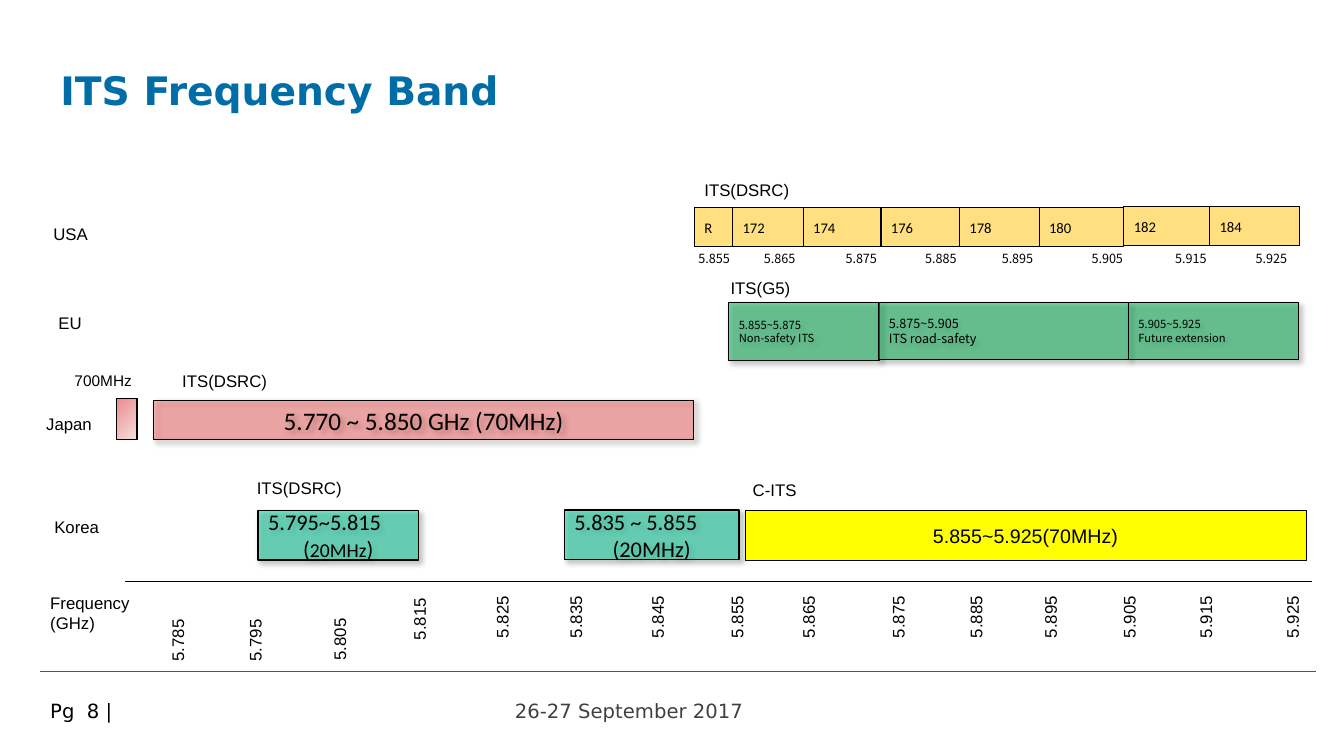
"""Build the ITS frequency band slide."""
from dataclasses import dataclass
from typing import Optional

from lxml.etree import SubElement
from pptx import Presentation
from pptx.dml.color import RGBColor as Rgb
from pptx.enum.shapes import MSO_CONNECTOR as Connector, MSO_SHAPE as Shape
from pptx.enum.text import MSO_ANCHOR as Anchor, MSO_AUTO_SIZE as AutoSize, PP_ALIGN as Align
from pptx.oxml.ns import qn
from pptx.util import Pt

COLOURS = {
    "black": "000000", "blue": "006DA7", "grey": "404040", "amber": "FFC000",
    "green": "00B050", "teal": "00CC99", "red": "FF0000", "yellow": "FFFF00",
    "rose": "EA8C8C", "pale rose": "F7DEDE",
}
ARIAL, CALIBRI, DEJAVU, NOTO = "Arial", "Calibri", "DejaVu Sans", "Noto Sans CJK KR"


@dataclass
class Line:
    runs: list[tuple[str, float]]
    align: Align = Align.LEFT


@dataclass
class Label:
    text: str
    left: float
    top: float
    width: float
    height: float = 21.6
    size: float = 12
    font: str = ARIAL
    colour: str = "black"
    wrap: bool = True
    rotation: float = 0


@dataclass
class Band:
    left: float
    top: float
    width: float
    height: float
    fill: str
    lines: list[Line]
    font: str = CALIBRI
    outline: float = 0.75
    opacity: Optional[int] = 50
    shadow: bool = True


def colour(name: str) -> Rgb:
    return Rgb.from_string(COLOURS[name])


def apply(target, values: dict) -> None:
    for name, value in values.items():
        setattr(target, name, value)


def add_run(paragraph, text: str, size: float, font: str, name: str, bold: bool = False) -> None:
    run = paragraph.add_run()
    run.text = text
    apply(run.font, {"size": Pt(size), "name": font, "bold": bold})
    run.font.color.rgb = colour(name)


def add_label(slide, label: Label) -> None:
    box = slide.shapes.add_textbox(Pt(label.left), Pt(label.top), Pt(label.width), Pt(label.height))
    box.rotation = label.rotation
    frame = box.text_frame
    apply(frame, {"word_wrap": label.wrap, "auto_size": AutoSize.SHAPE_TO_FIT_TEXT})
    for index, text in enumerate(label.text.split("\n")):
        paragraph = frame.add_paragraph() if index else frame.paragraphs[0]
        add_run(paragraph, text, label.size, label.font, label.colour)


def add_rectangle(slide, left: float, top: float, width: float, height: float, outline: float):
    shape = slide.shapes.add_shape(Shape.RECTANGLE, Pt(left), Pt(top), Pt(width), Pt(height))
    shape.shadow.inherit = False
    shape.line.color.rgb = colour("black")
    shape.line.width = Pt(outline)
    return shape


def add_alpha(colour_element, percent: int) -> None:
    SubElement(colour_element, qn("a:alpha"), val=str(percent * 1000))


def add_shadow(shape) -> None:
    effects = shape._element.spPr.find(qn("a:effectLst"))
    shadow = SubElement(effects, qn("a:outerShdw"), blurRad=str(Pt(4)), dist=str(Pt(3)),
                        dir="2700000", algn="tl", rotWithShape="0")
    add_alpha(SubElement(shadow, qn("a:srgbClr"), val=COLOURS["black"]), 40)


def add_band(slide, band: Band) -> None:
    shape = add_rectangle(slide, band.left, band.top, band.width, band.height, band.outline)
    shape.fill.solid()
    shape.fill.fore_color.rgb = colour(band.fill)
    if band.opacity is not None:
        fill = shape._element.spPr.find(qn("a:solidFill"))
        add_alpha(fill.find(qn("a:srgbClr")), band.opacity)
    if band.shadow:
        add_shadow(shape)
    frame = shape.text_frame
    apply(frame, {"word_wrap": True, "vertical_anchor": Anchor.MIDDLE})
    for index, line in enumerate(band.lines):
        paragraph = frame.add_paragraph() if index else frame.paragraphs[0]
        paragraph.alignment = line.align
        for text, size in line.runs:
            add_run(paragraph, text, size, band.font, "black")


def add_rule(slide, left: float, right: float, top: float, name: str) -> None:
    rule = slide.shapes.add_connector(Connector.STRAIGHT, Pt(left), Pt(top), Pt(right), Pt(top))
    rule.line.color.rgb = colour(name)
    rule.line.width = Pt(0.75)
    SubElement(rule._element.spPr, qn("a:effectLst"))


def add_heading(slide, text: str, position: tuple, margins: tuple, size: float,
                name: str, spacing: float, bold: bool) -> None:
    frame = slide.shapes.add_textbox(*map(Pt, position)).text_frame
    apply(frame, {"word_wrap": True, "margin_left": Pt(margins[0]), "margin_top": Pt(margins[1])})
    paragraph = frame.paragraphs[0]
    paragraph.line_spacing = spacing
    add_run(paragraph, text, size, DEJAVU, name, bold)


def gigahertz(start: float, step: int) -> str:
    return f"{start + step / 100:.3f}"


AXIS_LEFTS = [104.4, 159.8, 220.3, 277.2, 336.2, 388.8, 447.1, 504, 555.1,
              619.2, 674.6, 727.9, 784.1, 838.8, 900.7]
AXIS_TOPS = [446.4, 446.4, 445.7, 431.3] + [429.8] * 11
USA_LEFTS = [491.8, 538.6, 596.9, 653.8, 708.5, 772.6, 832.3, 889.9]
CHANNEL_EDGES = [496.1, 523.4, 573.8, 629.3, 685.4, 742.3, 802.8, 864, 928.1]
CHANNEL_NAMES = ["R"] + [str(number) for number in range(172, 186, 2)]

CHANNELS = [
    Band(left, 147.6 if name in ("182", "184") else 148.3, right - left, 28.1, "amber",
         [Line([(name, 10.5)])], shadow=False)
    for name, left, right in zip(CHANNEL_NAMES, CHANNEL_EDGES, CHANNEL_EDGES[1:])
]
EU_BANDS = [
    Band(left, 216, width, height, "green", [Line([(limits, size)]), Line([(use, size)])], NOTO)
    for left, width, height, size, limits, use in [
        (520.6, 107.3, 41.8, 8, "5.855~5.875", "Non-safety ITS"),
        (627.8, 178.2, 41, 9, "5.875~5.905", "ITS road-safety"),
        (806.1, 121.3, 41, 8, "5.905~5.925", "Future extension"),
    ]
]
ASIA_BANDS = [
    Band(109.6, 285.9, 385.9, 28.1, "red",
         [Line([("5.770 ~ 5.850 GHz (70MHz)", 18)], Align.CENTER)], outline=1, opacity=28),
    Band(403.2, 364.4, 124.6, 35.3, "teal",
         [Line([("5.835 ~ 5.855", 16)]), Line([("(20MHz)", 16)], Align.CENTER)], outline=1),
    Band(184.4, 364.8, 114.5, 35.3, "teal",
         [Line([("5.795~5.815", 16)]),
          Line([("(", 16), ("20MHz", 14), (")", 16)], Align.CENTER)], outline=1),
    Band(532.1, 364.4, 401, 36, "yellow", [Line([("5.855~5.925(70MHz)", 14)], Align.CENTER)],
         ARIAL, 0.5, None, False),
]
AXIS_LABELS = [
    Label(gigahertz(5.785, step), left, top, 44.6, wrap=False, rotation=270)
    for step, (left, top) in enumerate(zip(AXIS_LEFTS, AXIS_TOPS))
]
USA_LABELS = [
    Label(gigahertz(5.855, step), left, 175.9, 43.2, 18, 9, NOTO, wrap=False)
    for step, left in enumerate(USA_LEFTS)
]
REGIONS = [
    Label("USA", 31, 156.2, 39.6, wrap=False),
    Label("EU", 34.6, 219.6, 31.7, wrap=False),
    Label("Japan", 25.9, 292.3, 47.5, wrap=False),
    Label("Korea", 31.7, 365.8, 46.8, wrap=False),
]
CAPTIONS = [
    Label("Frequency\n(GHz)", 28.8, 419.8, 99.4, 36.7),
    Label("ITS(DSRC)", 123.1, 261.4, 110.2),
    Label("ITS(DSRC)", 496.1, 124.6, 129.6),
    Label("ITS(G5)", 514.8, 195.1, 129.6),
    Label("ITS(DSRC)", 176.4, 337.7, 132.5),
    Label("C-ITS", 530.6, 339.1, 132.5),
    Label("700MHz", 46.1, 261.4, 80.6, 20.9, 11),
    Label("26-27 September 2017", 360.7, 495.4, 277.9, 24.5, 14, DEJAVU, "grey"),
]


def main() -> None:
    presentation = Presentation()
    apply(presentation, {"slide_width": Pt(960), "slide_height": Pt(540)})
    slide = presentation.slides.add_slide(presentation.slide_layouts[6])
    add_rule(slide, 28.8, 940.3, 479.5, "blue")
    add_heading(slide, "ITS Frequency Band", (43.2, 49, 868.3, 51.1), (0, 1.4), 28, "blue", 0.94, True)
    add_heading(slide, "Pg  8 |", (28.8, 497.5, 198.7, 28.1), (7.2, 3.6), 14, "black", 0.93, False)
    add_rule(slide, 89.3, 937.4, 415.4, "black")
    for band in ASIA_BANDS + EU_BANDS + CHANNELS:
        add_band(slide, band)
    japan_700 = add_rectangle(slide, 83.5, 284.4, 14.4, 29.5, 0.75)
    japan_700.fill.gradient()
    japan_700.fill.gradient_angle = 315
    for stop, name in zip(japan_700.fill.gradient_stops, ("rose", "pale rose")):
        stop.color.rgb = colour(name)
    for label in AXIS_LABELS + USA_LABELS + REGIONS + CAPTIONS:
        add_label(slide, label)
    presentation.save("out.pptx")


if __name__ == "__main__":
    main()
